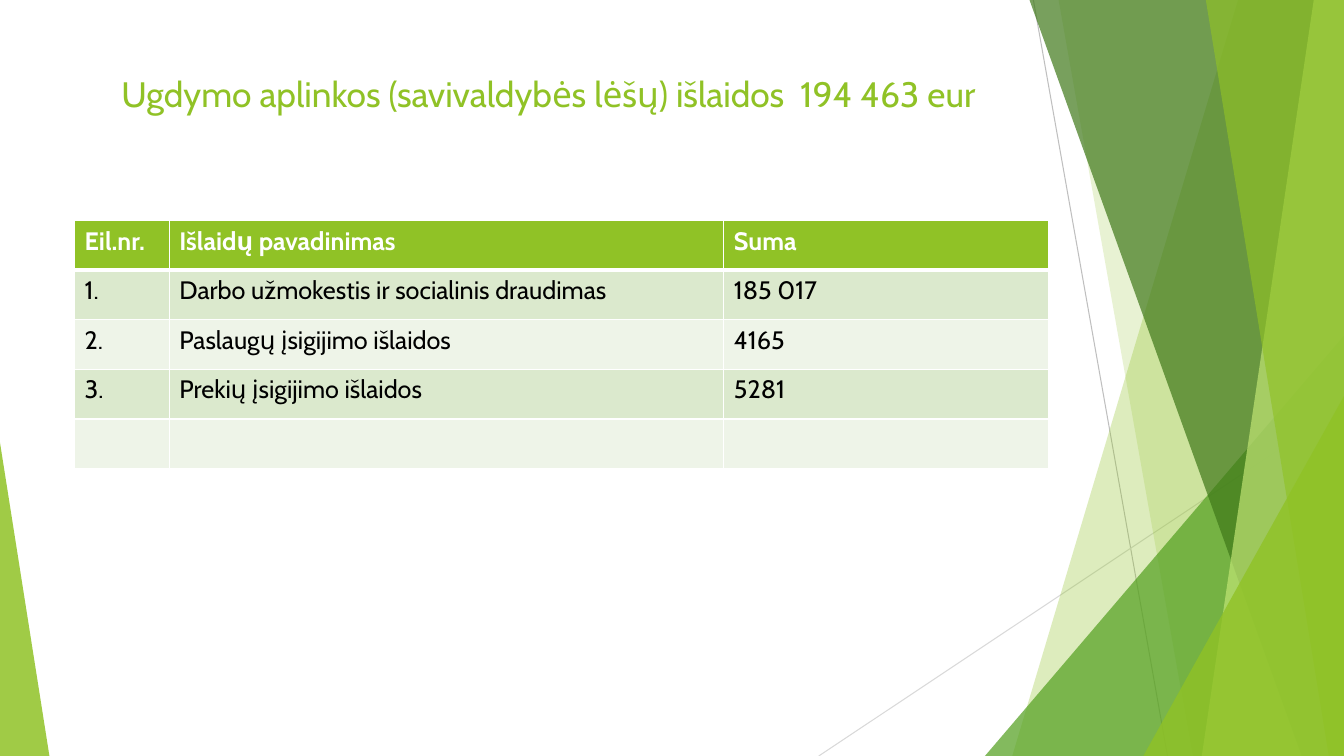
from dataclasses import dataclass

from lxml.etree import SubElement
from pptx import Presentation
from pptx.dml.color import RGBColor
from pptx.dml.fill import FillFormat
from pptx.enum.shapes import MSO_CONNECTOR, MSO_SHAPE
from pptx.enum.text import MSO_ANCHOR, PP_ALIGN
from pptx.oxml.ns import qn
from pptx.shapes.autoshape import Shape
from pptx.slide import Slide
from pptx.table import Table, _Cell
from pptx.text.text import _Paragraph
from pptx.util import Emu, Inches, Pt

SLIDE_WIDTH, SLIDE_HEIGHT = Inches(13.333), Inches(7.5)
FONT = "Cabin"

LIME = RGBColor(0x90, 0xC2, 0x26)
GREEN = RGBColor(0x54, 0xA0, 0x21)
FOREST = RGBColor(0x3F, 0x78, 0x19)
PALE_LIME = RGBColor(0xC0, 0xE4, 0x74)
ROW_TINT = RGBColor(0xDB, 0xE9, 0xCD)
ROW_LIGHT = RGBColor(0xEE, 0xF4, 0xE8)
GREY = RGBColor(0xBF, 0xBF, 0xBF)
LIGHT_GREY = RGBColor(0xD9, 0xD9, 0xD9)
WHITE = RGBColor(0xFF, 0xFF, 0xFF)
BLACK = RGBColor(0x00, 0x00, 0x00)


# Positions and lengths are percentages of the slide's size
def across(share: float) -> Emu:
    return Emu(round(SLIDE_WIDTH * share / 100))


def down(share: float) -> Emu:
    return Emu(round(SLIDE_HEIGHT * share / 100))


@dataclass
class Ray:
    start: tuple[float, float]
    end: tuple[float, float]
    color: RGBColor


@dataclass
class Band:
    """Full-height facet between a slanted left edge and the slide's right edge."""
    top_x: float
    bottom_x: float
    color: RGBColor
    opacity: int


@dataclass
class Peak:
    """Right triangle standing on the slide's bottom edge."""
    left: float
    top: float
    right: float
    apex: float
    color: RGBColor
    opacity: int


RAYS = [
    Ray((76.89, 0), (86.87, 100), GREY),
    Ray((100, 53.73), (60.92, 100), LIGHT_GREY),
]
FACETS = [
    Band(92.12, 75.32, LIME, 30),
    Band(78.77, 88.75, LIME, 20),
    Peak(73.29, 44.4, 100, 1, GREEN, 72),
    Band(76.6, 96.85, FOREST, 70),
    Band(97.75, 89.42, PALE_LIME, 70),
    Band(89.72, 98.87, LIME, 65),
    Peak(85.07, 52.4, 100, 1, LIME, 80),
    Peak(0, 58.53, 3.68, 0, LIME, 85),
]

TITLE = "Ugdymo aplinkos (savivaldybės lėšų) išlaidos  194 463 eur"
MARGIN = 5.55
COLUMN_SHARES = [7.05, 41.26, 24.16]
ROW_SHARE = 6.56
EXPENSES = [
    ("Eil.nr.", "Išlaidų pavadinimas", "Suma"),
    ("1.", "Darbo užmokestis ir socialinis draudimas", "185 017"),
    ("2.", "Paslaugų įsigijimo išlaidos", "4165"),
    ("3.", "Prekių įsigijimo išlaidos", "5281"),
    ("", "", ""),
]


def set_fill(fill: FillFormat, color: RGBColor) -> None:
    fill.solid()
    fill.fore_color.rgb = color


def set_font(paragraph: _Paragraph, size: float, color: RGBColor, bold: bool = False) -> None:
    font = paragraph.font
    font.name, font.size, font.bold = FONT, Pt(size), bold
    font.color.rgb = color


def draw_ray(slide: Slide, ray: Ray) -> None:
    (x1, y1), (x2, y2) = ray.start, ray.end
    line = slide.shapes.add_connector(
        MSO_CONNECTOR.STRAIGHT, across(x1), down(y1), across(x2), down(y2))
    line.line.color.rgb = ray.color
    line.line.width = Pt(0.75)
    SubElement(line._element.spPr, qn("a:effectLst"))


def band_shape(slide: Slide, band: Band) -> Shape:
    outline = slide.shapes.build_freeform(across(band.top_x), 0)
    outline.add_line_segments([
        (across(100), 0), (across(100), down(100)), (across(band.bottom_x), down(100))])
    return outline.convert_to_shape()


def peak_shape(slide: Slide, peak: Peak) -> Shape:
    triangle = slide.shapes.add_shape(
        MSO_SHAPE.ISOSCELES_TRIANGLE, across(peak.left), down(peak.top),
        across(peak.right - peak.left), down(100 - peak.top))
    triangle.adjustments[0] = peak.apex
    return triangle


def draw_facet(slide: Slide, facet: Band | Peak) -> None:
    shape = band_shape(slide, facet) if isinstance(facet, Band) else peak_shape(slide, facet)
    shape.shadow.inherit = False
    set_fill(shape.fill, facet.color)
    shape.line.fill.background()
    color = shape._element.spPr.find(f"{qn('a:solidFill')}/{qn('a:srgbClr')}")
    SubElement(color, qn("a:alpha"), val=str(facet.opacity * 1000))


def draw_title(slide: Slide) -> None:
    box = slide.shapes.add_textbox(across(MARGIN), down(8.93), across(70.52), down(19.2))
    frame = box.text_frame
    frame.word_wrap = True
    frame.vertical_anchor = MSO_ANCHOR.TOP
    heading = frame.paragraphs[0]
    heading.text = TITLE
    heading.alignment = PP_ALIGN.CENTER
    set_font(heading, 25.2, LIME)


def set_borders(cell: _Cell, widths: dict[str, float]) -> None:
    properties = cell._tc.get_or_add_tcPr()
    for side, width in widths.items():
        border = SubElement(properties, qn(f"a:ln{side}"), w=str(Pt(width)))
        paint = SubElement(border, qn("a:solidFill"))
        SubElement(paint, qn("a:srgbClr"), val=str(WHITE))


def fill_row(table: Table, row: int, texts: tuple[str, ...]) -> None:
    is_header = row == 0
    background = LIME if is_header else (ROW_LIGHT, ROW_TINT)[row % 2]
    widths = {"L": 1, "R": 1, "T": 3 if row == 1 else 1, "B": 3 if is_header else 1}
    for column, text in enumerate(texts):
        cell = table.cell(row, column)
        set_borders(cell, widths)
        set_fill(cell.fill, background)
        cell.text = text
        set_font(cell.text_frame.paragraphs[0], 18, WHITE if is_header else BLACK, is_header)


def draw_expenses(slide: Slide) -> None:
    table = slide.shapes.add_table(
        len(EXPENSES), len(COLUMN_SHARES), across(MARGIN), down(29.2),
        across(sum(COLUMN_SHARES)), down(ROW_SHARE * len(EXPENSES))).table
    for column, share in zip(table.columns, COLUMN_SHARES):
        column.width = across(share)
    for row, texts in enumerate(EXPENSES):
        table.rows[row].height = down(ROW_SHARE)
        fill_row(table, row, texts)


def main() -> None:
    presentation = Presentation()
    presentation.slide_width, presentation.slide_height = SLIDE_WIDTH, SLIDE_HEIGHT
    slide = presentation.slides.add_slide(presentation.slide_layouts[6])

    # Faceted backdrop
    for ray in RAYS:
        draw_ray(slide, ray)
    for facet in FACETS:
        draw_facet(slide, facet)

    # Content
    draw_title(slide)
    draw_expenses(slide)
    presentation.save("out.pptx")


if __name__ == "__main__":
    main()
